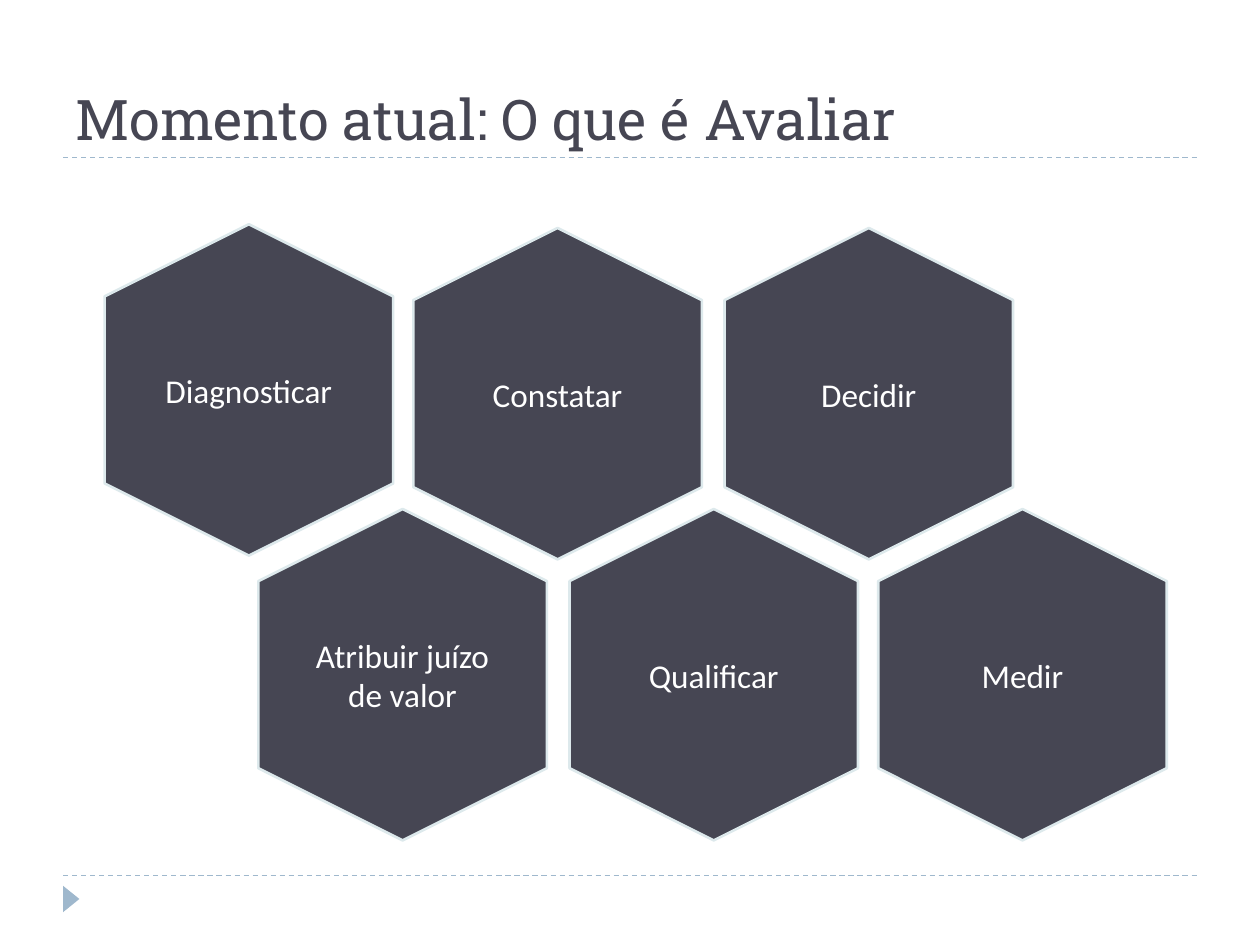
from dataclasses import dataclass

from lxml import etree
from pptx import Presentation
from pptx import util as u
from pptx.dml import color, fill
from pptx.enum import dml, shapes, text
from pptx.oxml import ns

DARK, BLUE, PALE, WHITE = "464653", "9FB8CD", "DDE9EC", "FFFFFF"
HEX_W, HEX_H = 2.63, 2.29
TEXT_W, TEXT_H = 1.57, 1.81


@dataclass
class Cell:
    label: str
    left: float
    top: float


CELLS = [
    Cell("Diagnosticar", 0.66, 1.95),
    Cell("Medir", 6.8, 4.21),
    Cell("Constatar", 3.11, 1.98),
    Cell("Decidir", 5.58, 1.98),
    Cell("Qualificar", 4.35, 4.21),
    Cell("Atribuir juízo de valor", 1.88, 4.21),
]


def paint(area: fill.FillFormat, tone: str) -> None:
    area.solid()
    area.fore_color.rgb = color.RGBColor.from_string(tone)


def add_rule(slide, top: float) -> None:
    rule = slide.shapes.add_connector(
        shapes.MSO_CONNECTOR.STRAIGHT,
        u.Inches(0.5), u.Inches(top), u.Inches(9.5), u.Inches(top),
    )
    paint(rule.line.fill, BLUE)
    rule.line.width = u.Pt(0.75)
    rule.line.dash_style = dml.MSO_LINE.DASH
    props = rule._element.find(ns.qn("p:spPr"))
    etree.SubElement(props, ns.qn("a:effectLst"))


def add_turned(slide, kind: shapes.MSO_SHAPE, left: float, top: float,
               width: float, height: float, tone: str, edge: str = ""):
    shape = slide.shapes.add_shape(
        kind, u.Inches(left), u.Inches(top), u.Inches(width), u.Inches(height)
    )
    shape.rotation = 90
    shape.shadow.inherit = False
    paint(shape.fill, tone)
    if edge:
        paint(shape.line.fill, edge)
        shape.line.width = u.Pt(1.5)
    else:
        shape.line.fill.background()
    return shape


def add_text(slide, words: str, left: float, top: float, width: float,
             height: float, *, size: float, font: str, tone: str,
             align: text.PP_ALIGN, anchor: text.MSO_ANCHOR,
             side: float = 0, edge: float = 0) -> None:
    box = slide.shapes.add_textbox(
        u.Inches(left), u.Inches(top), u.Inches(width), u.Inches(height)
    )
    frame = box.text_frame
    frame.word_wrap = True
    frame.vertical_anchor = anchor
    frame.margin_left = frame.margin_right = u.Inches(side)
    frame.margin_top = frame.margin_bottom = u.Inches(edge)
    para = frame.paragraphs[0]
    para.alignment = align
    run = para.add_run()
    run.text = words
    run.font.size = u.Pt(size)
    run.font.name = font
    paint(run.font.fill, tone)


def add_cell(slide, cell: Cell) -> None:
    add_turned(slide, shapes.MSO_SHAPE.HEXAGON, cell.left, cell.top,
               HEX_W, HEX_H, DARK, PALE)
    add_text(slide, cell.label,
             cell.left + (HEX_W - TEXT_W) / 2, cell.top + (HEX_H - TEXT_H) / 2,
             TEXT_W, TEXT_H, size=19, font="Calibri", tone=WHITE,
             align=text.PP_ALIGN.CENTER, anchor=text.MSO_ANCHOR.MIDDLE)


def main() -> None:
    deck = Presentation()
    deck.slide_width, deck.slide_height = u.Inches(10), u.Inches(7.5)
    slide = deck.slides.add_slide(deck.slide_layouts[6])
    for top in (6.95, 1.25):
        add_rule(slide, top)
    add_turned(slide, shapes.MSO_SHAPE.ISOSCELES_TRIANGLE,
               0.46, 7.07, 0.21, 0.13, BLUE)
    for cell in CELLS:
        add_cell(slide, cell)
    add_text(slide, "Momento atual: O que é Avaliar", 0.5, 0.17, 9, 1.08,
             size=32, font="Roboto Slab", tone=DARK,
             align=text.PP_ALIGN.LEFT, anchor=text.MSO_ANCHOR.BOTTOM,
             side=0.1, edge=0.05)
    deck.save("out.pptx")


if __name__ == "__main__":
    main()
